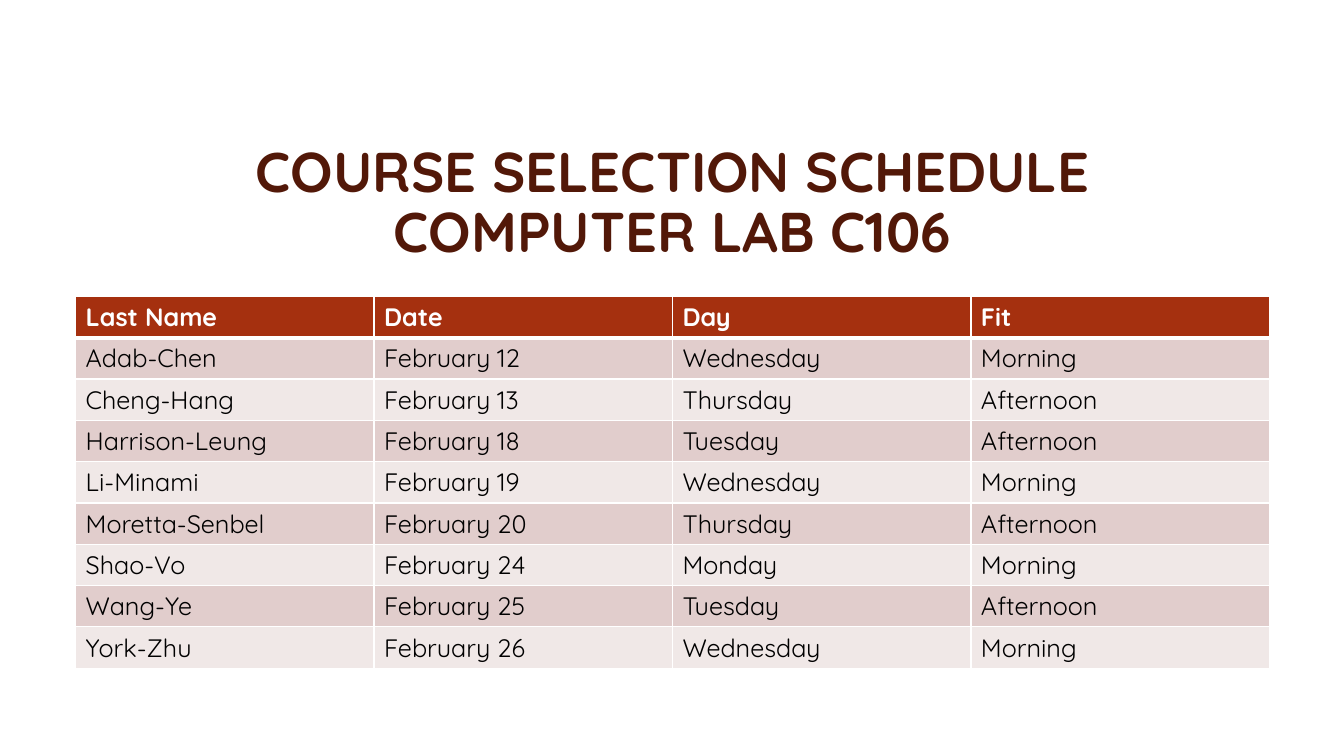
from pptx import Presentation
from pptx.dml.color import RGBColor
from pptx.enum.text import MSO_ANCHOR, PP_ALIGN
from pptx.oxml import parse_xml
from pptx.oxml.ns import nsdecls
from pptx.util import Inches, Pt

FONT = "Quicksand"
COLORS = {
    "title": "521808",
    "header": "A5300F",
    "odd_row": "E1CDCC",
    "even_row": "F0E8E7",
    "white": "FFFFFF",
    "text": "000000",
}
ROW_HEIGHT = 0.41
COLUMN_WIDTH = 2.96

SCHEDULE = [
    ("Last Name", "Date", "Day", "Fit"),
    ("Adab-Chen", "February 12", "Wednesday", "Morning"),
    ("Cheng-Hang", "February 13", "Thursday", "Afternoon"),
    ("Harrison-Leung", "February 18", "Tuesday", "Afternoon"),
    ("Li-Minami", "February 19", "Wednesday", "Morning"),
    ("Moretta-Senbel", "February 20", "Thursday", "Afternoon"),
    ("Shao-Vo", "February 24", "Monday", "Morning"),
    ("Wang-Ye", "February 25", "Tuesday", "Afternoon"),
    ("York-Zhu", "February 26", "Wednesday", "Morning"),
]


def write(paragraph, text, size, color, bold):
    paragraph.text = text
    font = paragraph.font
    font.name, font.size, font.bold = FONT, Pt(size), bold
    font.color.rgb = RGBColor.from_string(COLORS[color])


def add_title(slide, text):
    box = slide.shapes.add_textbox(Inches(1.96), Inches(1.32), Inches(9.42), Inches(1.41))
    frame = box.text_frame
    frame.word_wrap = True
    frame.vertical_anchor = MSO_ANCHOR.MIDDLE
    paragraph = frame.paragraphs[0]
    paragraph.alignment = PP_ALIGN.CENTER
    paragraph.line_spacing = 0.9
    write(paragraph, text, 40, "title", True)


def set_borders(cell, widths):
    """Draw white borders; widths in points, keyed by side."""
    properties = cell._tc.get_or_add_tcPr()
    for side, width in widths.items():
        properties.append(parse_xml(
            f'<a:ln{side} {nsdecls("a")} w="{Pt(width)}"><a:solidFill>'
            f'<a:srgbClr val="{COLORS["white"]}"/></a:solidFill></a:ln{side}>'))


def style_cell(cell, text, row):
    is_header = row == 0
    # Borders go before the fill; a thick line separates the header
    set_borders(cell, {"L": 1, "R": 1, "T": 3 if row == 1 else 1, "B": 3 if is_header else 1})
    fill = "header" if is_header else "odd_row" if row % 2 else "even_row"
    cell.fill.solid()
    cell.fill.fore_color.rgb = RGBColor.from_string(COLORS[fill])
    write(cell.text_frame.paragraphs[0], text, 18, "white" if is_header else "text", is_header)


def add_schedule(slide, rows):
    row_count, column_count = len(rows), len(rows[0])
    table = slide.shapes.add_table(
        row_count, column_count, Inches(0.75), Inches(2.94),
        Inches(COLUMN_WIDTH * column_count), Inches(ROW_HEIGHT * row_count)).table
    for row, values in enumerate(rows):
        for column, value in enumerate(values):
            style_cell(table.cell(row, column), value, row)


def main():
    presentation = Presentation()
    presentation.slide_width, presentation.slide_height = Inches(13.33), Inches(7.5)
    slide = presentation.slides.add_slide(presentation.slide_layouts[6])
    add_title(slide, "COURSE SELECTION SCHEDULE\vCOMPUTER LAB C106")
    add_schedule(slide, SCHEDULE)
    presentation.save("out.pptx")


if __name__ == "__main__":
    main()
